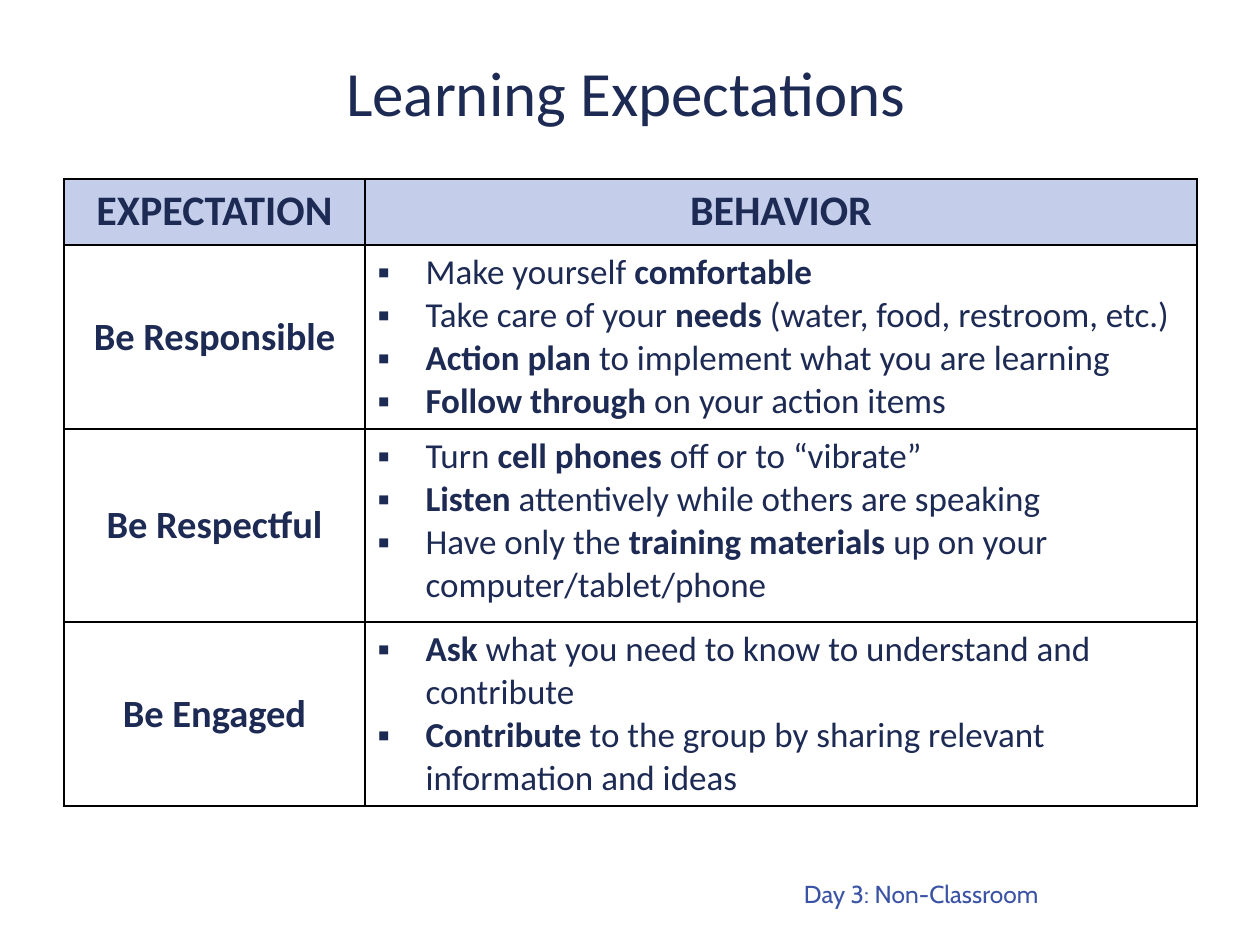
from dataclasses import dataclass

from lxml.etree import SubElement
from pptx import Presentation
from pptx.dml.color import RGBColor
from pptx.enum.text import MSO_ANCHOR, PP_ALIGN
from pptx.oxml.ns import qn
from pptx.util import Pt

EMU_PER_PX = 914400 / 126
COLORS = {
    "navy": "1D2A53",
    "blue": "3A53A5",
    "header": "C4CDEA",
    "white": "FFFFFF",
    "border": "000000",
}
INDENT = 48
COLUMN_WIDTHS = (301, 832)
HEADER_HEIGHT = 66


@dataclass
class Label:
    text: str
    left: int
    top: int
    width: int
    height: int
    font: str
    size: int
    color: str
    align: PP_ALIGN
    anchor: MSO_ANCHOR


@dataclass
class Expectation:
    name: str
    height: int
    behaviors: tuple[str, ...]


LABELS = (
    Label("Day 3: Non-Classroom", 359, 843, 692, 72, "Cabin", 14, "blue",
          PP_ALIGN.RIGHT, MSO_ANCHOR.BOTTOM),
    Label("Learning Expectations", 64, 48, 1124, 86, "Calibri", 36, "navy",
          PP_ALIGN.CENTER, MSO_ANCHOR.MIDDLE),
)

EXPECTATIONS = (
    Expectation("Be Responsible", 180, (
        "Make yourself *comfortable*",
        "Take care of your *needs* (water, food, restroom, etc.)",
        "*Action plan *to implement what you are learning",
        "*Follow through *on your action items",
    )),
    Expectation("Be Respectful", 193, (
        "Turn *cell phones* off or to “vibrate”",
        "*Listen *attentively while others are speaking",
        "Have only the *training materials *up on your computer/tablet/phone",
    )),
    Expectation("Be Engaged", 180, (
        "*Ask* what you need to know to understand and contribute",
        "*Contribute *to the group by sharing relevant information and ideas",
    )),
)


def px(value: int) -> int:
    return round(value * EMU_PER_PX)


def rgb(name: str) -> RGBColor:
    return RGBColor.from_string(COLORS[name])


def style_font(p, name: str, size: int, color: str) -> None:
    p.font.name = name
    p.font.size = Pt(size)
    p.font.color.rgb = rgb(color)


def add_label(s, label: Label) -> None:
    box = s.shapes.add_textbox(
        px(label.left), px(label.top), px(label.width), px(label.height))
    tf = box.text_frame
    tf.word_wrap = True
    tf.vertical_anchor = label.anchor
    p = tf.paragraphs[0]
    p.text = label.text
    p.alignment = label.align
    style_font(p, label.font, label.size, label.color)


def format_cell(cell, fill: str) -> None:
    cell.fill.solid()
    cell.fill.fore_color.rgb = rgb(fill)
    tc_pr = cell._tc.get_or_add_tcPr()
    for i, side in enumerate(("lnL", "lnR", "lnT", "lnB")):
        line = SubElement(tc_pr, qn(f"a:{side}"), w=str(Pt(1)))
        solid = SubElement(line, qn("a:solidFill"))
        SubElement(solid, qn("a:srgbClr"), val=COLORS["border"])
        tc_pr.insert(i, line)


def write_heading(cell, text: str, size: int, fill: str) -> None:
    format_cell(cell, fill)
    p = cell.text_frame.paragraphs[0]
    p.text = text
    p.alignment = PP_ALIGN.CENTER
    style_font(p, "Calibri", size, "navy")
    p.font.bold = True


def add_bullet(p) -> None:
    p_pr = p._p.get_or_add_pPr()
    p_pr.set("marL", str(px(INDENT)))
    p_pr.set("indent", str(-px(INDENT)))
    color = SubElement(p_pr, qn("a:buClr"))
    SubElement(color, qn("a:srgbClr"), val=COLORS["navy"])
    SubElement(p_pr, qn("a:buFont"), typeface="Calibri")
    SubElement(p_pr, qn("a:buChar"), char="▪")
    tabs = SubElement(p_pr, qn("a:tabLst"))
    SubElement(tabs, qn("a:tab"), pos=str(px(63)), algn="l")


def write_behaviors(cell, behaviors: tuple[str, ...]) -> None:
    format_cell(cell, "white")
    tf = cell.text_frame
    for i, behavior in enumerate(behaviors):
        p = tf.add_paragraph() if i else tf.paragraphs[0]
        add_bullet(p)
        style_font(p, "Calibri", 20, "navy")
        for j, part in enumerate(behavior.split("*")):
            if part:
                r = p.add_run()
                r.text = part
                r.font.bold = j % 2 == 1


def add_expectations(s, rows: tuple[Expectation, ...]) -> None:
    heights = (HEADER_HEIGHT, *(row.height for row in rows))
    table = s.shapes.add_table(
        len(heights), len(COLUMN_WIDTHS), px(64), px(179),
        px(sum(COLUMN_WIDTHS)), px(sum(heights))).table
    table.first_row = False
    table.horz_banding = False
    for column, width in zip(table.columns, COLUMN_WIDTHS):
        column.width = px(width)
    for table_row, height in zip(table.rows, heights):
        table_row.height = px(height)
    for i, title in enumerate(("EXPECTATION", "BEHAVIOR")):
        write_heading(table.cell(0, i), title, 24, "header")
    for i, row in enumerate(rows, 1):
        name_cell = table.cell(i, 0)
        write_heading(name_cell, row.name, 22, "white")
        name_cell.vertical_anchor = MSO_ANCHOR.MIDDLE
        write_behaviors(table.cell(i, 1), row.behaviors)


def main() -> None:
    prs = Presentation()
    prs.slide_width = px(1260)
    prs.slide_height = px(945)
    s = prs.slides.add_slide(prs.slide_layouts[6])
    add_expectations(s, EXPECTATIONS)
    for label in LABELS:
        add_label(s, label)
    prs.save("out.pptx")


if __name__ == "__main__":
    main()
